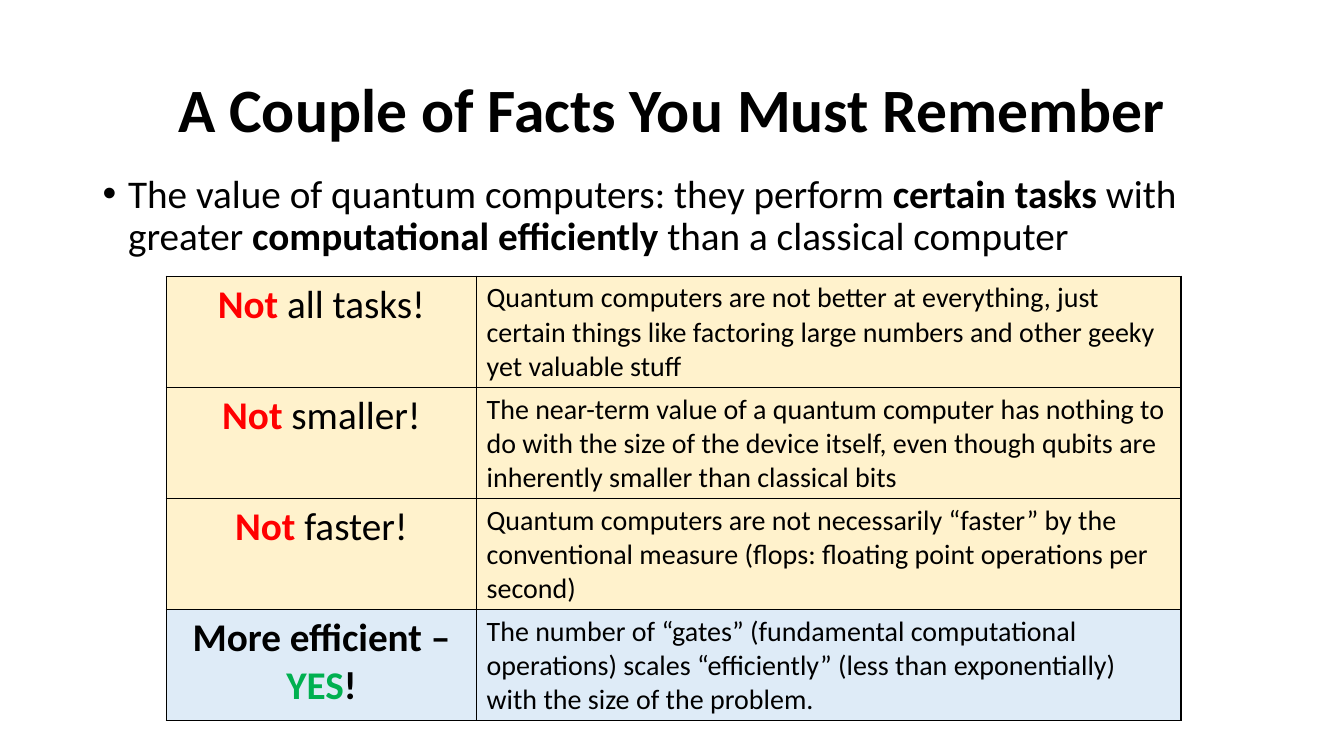
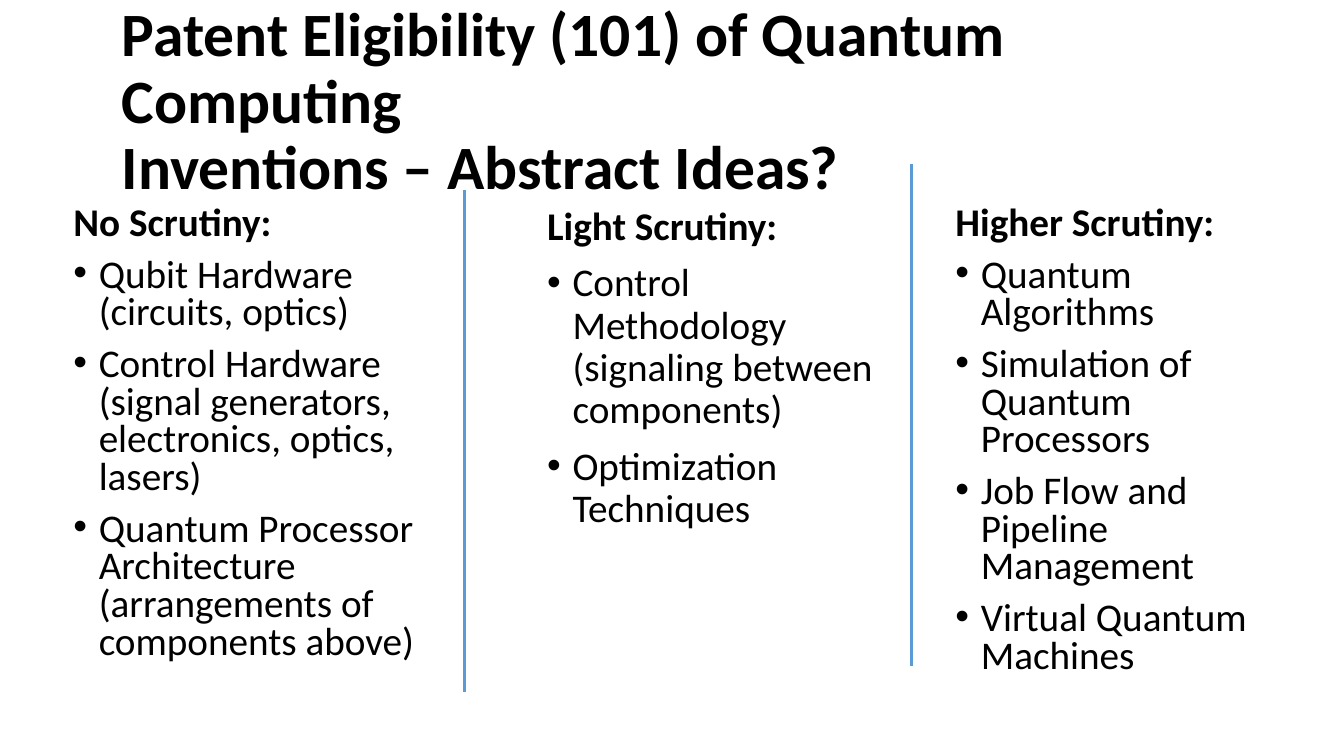
"""Build two slides on the value and the patent eligibility of quantum computing."""
from lxml import etree
from pptx import Presentation
from pptx.dml.color import RGBColor
from pptx.enum.shapes import MSO_CONNECTOR
from pptx.enum.text import MSO_ANCHOR, PP_ALIGN
from pptx.oxml.ns import qn
from pptx.util import Cm, Pt

LEFT, CENTER = PP_ALIGN.LEFT, PP_ALIGN.CENTER
TOP, MIDDLE = MSO_ANCHOR.TOP, MSO_ANCHOR.MIDDLE
STRAIGHT = MSO_CONNECTOR.STRAIGHT

FONT = "Calibri"
COLORS = {
    "text": "000000",
    "no": "FF0000",
    "yes": "00B050",
    "warn": "FFF2CC",
    "good": "DEEBF7",
    "rule": "5B9BD5",
}
TITLE_SIZE, BODY_SIZE, CELL_SIZE = 44, 28, 20
WIDE = 29.21
INDENT = Cm(0.64)

VALUE = [
    ("The value of quantum computers: they perform ", False, "text"),
    ("certain tasks ", True, "text"),
    ("with greater ", False, "text"),
    ("computational efficiently ", True, "text"),
    ("than a classical computer", False, "text"),
]
NOT = ("Not ", True, "no")
FACTS = [
    ("warn", [NOT, ("all tasks!", False, "text")],
     "Quantum computers are not better at everything, just certain things like "
     "factoring large numbers and other geeky yet valuable stuff"),
    ("warn", [NOT, ("smaller!", False, "text")],
     "The near-term value of a quantum computer has nothing to do with the size of "
     "the device itself, even though qubits are inherently smaller than classical bits"),
    ("warn", [NOT, ("faster!", False, "text")],
     "Quantum computers are not necessarily “faster” by the conventional measure "
     "(flops: floating point operations per second)"),
    ("good", [("More efficient – ", True, "text"), ("YES", True, "yes"), ("!", True, "text")],
     "The number of “gates” (fundamental computational operations) scales "
     "“efficiently” (less than exponentially) with the size of the problem."),
]
LEVELS = [
    (1.6, 0.8, "No Scrutiny:", [
        "Qubit Hardware (circuits, optics)",
        "Control Hardware (signal generators, electronics, optics, lasers)",
        "Quantum Processor Architecture (arrangements of components above)",
    ]),
    (13.54, 0.9, "Light Scrutiny:", [
        "Control Methodology (signaling between components)",
        "Optimization Techniques",
    ]),
    (23.83, 0.8, "Higher Scrutiny:", [
        "Quantum Algorithms",
        "Simulation of Quantum Processors",
        "Job Flow and Pipeline Management",
        "Virtual Quantum Machines",
    ]),
]
RULES = [(11.71, 4.8), (22.96, 4.14)]


def color(name):
    return RGBColor.from_string(COLORS[name])


def style(para, size, bold=False, align=LEFT):
    para.alignment = align
    font = para.font
    font.name, font.size, font.bold = FONT, Pt(size), bold
    font.color.rgb = color("text")


def add_runs(para, runs):
    for text, bold, name in runs:
        run = para.add_run()
        run.text = text
        run.font.bold = bold
        run.font.color.rgb = color(name)


def space(para, line):
    para.line_spacing = line
    para.space_before = Pt(10)


def bullet(para):
    props = para._p.get_or_add_pPr()
    props.set("marL", str(INDENT))
    props.set("indent", str(-INDENT))
    etree.SubElement(props, qn("a:buFont"), typeface="Arial")
    etree.SubElement(props, qn("a:buChar"), char="•")


def add_box(slide, left, top, width, height, anchor=TOP):
    box = slide.shapes.add_textbox(Cm(left), Cm(top), Cm(width), Cm(height))
    frame = box.text_frame
    frame.word_wrap = True
    frame.vertical_anchor = anchor
    return frame


def add_title(slide, text, left, top, align=LEFT):
    para = add_box(slide, left, top, WIDE, 3.68, MIDDLE).paragraphs[0]
    para.text = text
    para.line_spacing = 0.9
    style(para, TITLE_SIZE, True, align)


def add_point(slide, runs):
    para = add_box(slide, 2.34, 4.27, WIDE, 3.1).paragraphs[0]
    space(para, 0.9)
    bullet(para)
    style(para, BODY_SIZE)
    add_runs(para, runs)


def fill_cell(cell, fill):
    props = cell._tc.get_or_add_tcPr()
    for side in ("lnL", "lnR", "lnT", "lnB"):
        line = etree.SubElement(props, qn(f"a:{side}"), w=str(Pt(1)))
        solid = etree.SubElement(line, qn("a:solidFill"))
        etree.SubElement(solid, qn("a:srgbClr"), val=COLORS["text"])
    cell.fill.solid()
    cell.fill.fore_color.rgb = color(fill)


def add_facts(slide, facts):
    widths, height = (7.82, 17.75), 2.8
    table = slide.shapes.add_table(
        len(facts), len(widths), Cm(4.19), Cm(6.96),
        Cm(sum(widths)), Cm(height * len(facts))).table
    table.first_row = table.horz_banding = False
    for col, width in zip(table.columns, widths):
        col.width = Cm(width)
    for row, (fill, claim, detail) in zip(table.rows, facts):
        head, body = row.cells
        for cell in (head, body):
            fill_cell(cell, fill)
        para = head.text_frame.paragraphs[0]
        style(para, BODY_SIZE, align=CENTER)
        add_runs(para, claim)
        para = body.text_frame.paragraphs[0]
        para.text = detail
        style(para, CELL_SIZE)


def add_level(slide, left, line, head, items):
    frame = add_box(slide, left, 5.08, 9.17, 12.5)
    para = frame.paragraphs[0]
    para.text = head
    space(para, line)
    style(para, BODY_SIZE, True)
    for item in items:
        para = frame.add_paragraph()
        para.text = item
        space(para, line)
        bullet(para)
        style(para, BODY_SIZE)


def add_rule(slide, left, top):
    rule = slide.shapes.add_connector(
        STRAIGHT, Cm(left), Cm(top), Cm(left), Cm(top + 12.64))
    rule.line.color.rgb = color("rule")
    rule.line.width = Pt(2.25)
    etree.SubElement(rule._element.spPr, qn("a:effectLst"))


def main():
    deck = Presentation()
    deck.slide_width, deck.slide_height = Cm(33.87), Cm(19.05)
    blank = deck.slide_layouts[6]

    slide = deck.slides.add_slide(blank)
    add_title(slide, "A Couple of Facts You Must Remember", 2.34, 0.99, CENTER)
    add_point(slide, VALUE)
    add_facts(slide, FACTS)

    slide = deck.slides.add_slide(blank)
    add_title(slide, "Patent Eligibility (101) of Quantum Computing\v"
              "Inventions – Abstract Ideas?", 2.82, 0.76)
    for level in LEVELS:
        add_level(slide, *level)
    for rule in RULES:
        add_rule(slide, *rule)

    deck.save("out.pptx")


if __name__ == "__main__":
    main()
